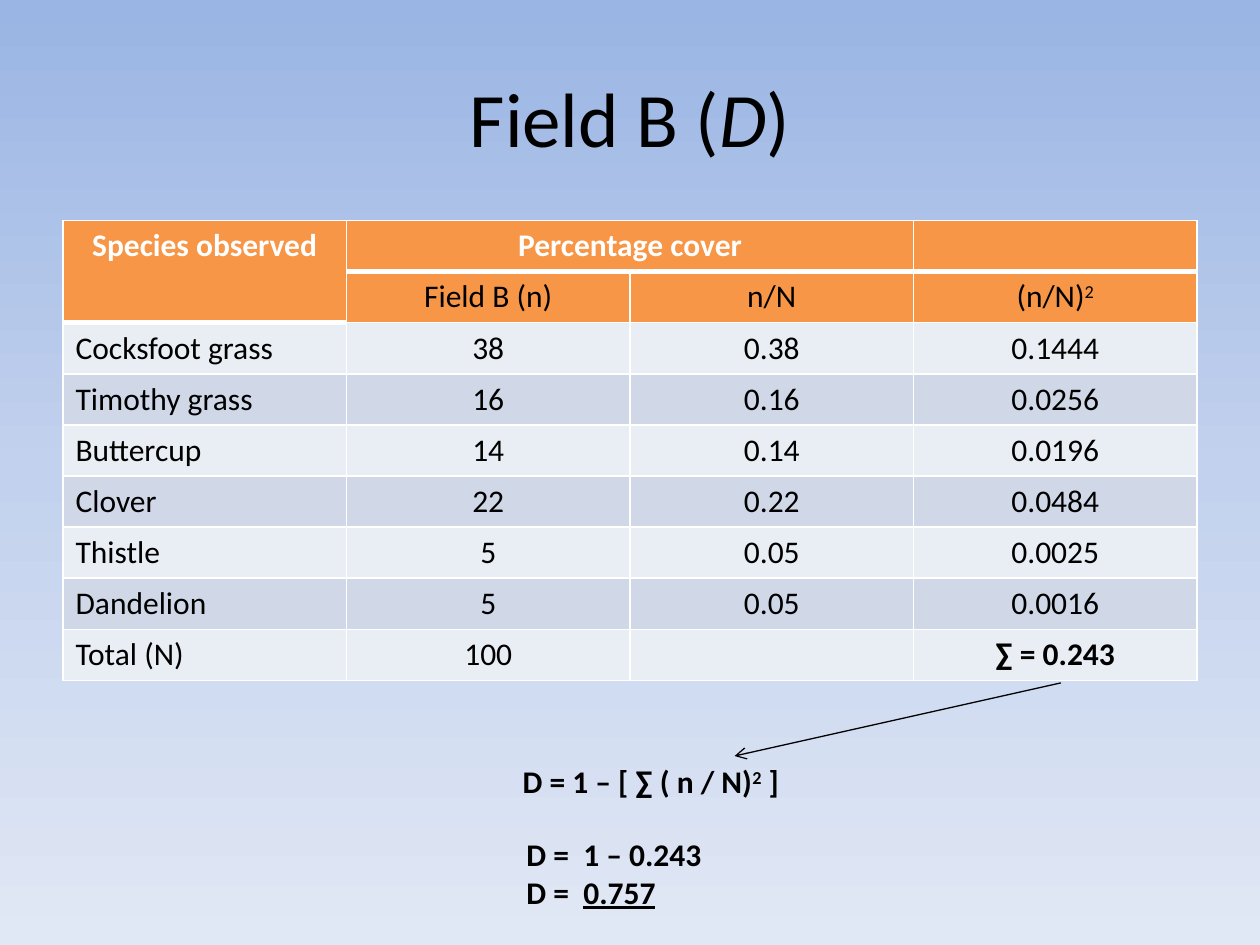
from dataclasses import dataclass

from lxml.etree import SubElement
from pptx import Presentation
from pptx.dml.color import RGBColor
from pptx.enum.shapes import MSO_CONNECTOR as Connector
from pptx.enum.text import MSO_ANCHOR as Anchor, MSO_AUTO_SIZE as AutoSize, PP_ALIGN as Align
from pptx.oxml import parse_xml
from pptx.oxml.ns import nsdecls, qn
from pptx.util import Inches, Pt


@dataclass(frozen=True)
class Theme:
    font: str = "Calibri"
    title_size: int = 44
    body_size: int = 18
    text: str = "000000"
    white: str = "FFFFFF"
    header: str = "F79646"
    bands: tuple = ("E9EDF4", "D0D8E8")
    background: tuple = ((0, "9AB5E4"), (50, "C2D1ED"), (100, "E1E8F5"))
    thin: float = 1
    thick: float = 3
    arrow: float = 0.75


@dataclass(frozen=True)
class Run:
    text: str
    bold: bool = False
    italic: bool = False
    underline: bool = False
    superscript: bool = False
    color: str = "000000"
    size: int = 18


@dataclass(frozen=True)
class Box:
    left: float
    top: float
    width: float
    height: float

    def lengths(self) -> tuple:
        return tuple(Inches(v) for v in (self.left, self.top, self.width, self.height))


@dataclass(frozen=True)
class Species:
    name: str
    cover: str
    share: str
    share_squared: str


THEME = Theme()
TABLE_BOX = Box(0.5, 1.75, 9, 3.65)
HEADER_ROWS = 2
SPECIES = (
    Species("Cocksfoot grass", "38", "0.38", "0.1444"),
    Species("Timothy grass", "16", "0.16", "0.0256"),
    Species("Buttercup", "14", "0.14", "0.0196"),
    Species("Clover", "22", "0.22", "0.0484"),
    Species("Thistle", "5", "0.05", "0.0025"),
    Species("Dandelion", "5", "0.05", "0.0016"),
)


def table_rows() -> list:
    """Return the runs of every cell, row by row."""
    def heading(text: str) -> list:
        return [Run(text, bold=True, color=THEME.white)]

    rows = [
        [heading("Species observed"), heading("Percentage cover"), [], []],
        [[], [Run("Field B (n)")], [Run("n/N")], [Run("(n/N)"), Run("2", superscript=True)]],
    ]
    for species in SPECIES:
        values = (species.name, species.cover, species.share, species.share_squared)
        rows.append([[Run(value)] for value in values])
    rows.append([[Run("Total (N)")], [Run("100")], [], [Run("∑ = 0.243", bold=True)]])
    return rows


def add_runs(paragraph, runs: list, align: Align) -> None:
    paragraph.alignment = align
    for item in runs:
        run = paragraph.add_run()
        run.text = item.text
        font = run.font
        font.name, font.size = THEME.font, Pt(item.size)
        font.bold, font.italic, font.underline = item.bold, item.italic, item.underline
        font.color.rgb = RGBColor.from_string(item.color)
        if item.superscript:
            run._r.get_or_add_rPr().set("baseline", "30000")


def set_background(slide) -> None:
    stops = "".join(
        f'<a:gs pos="{position * 1000}"><a:srgbClr val="{color}"/></a:gs>'
        for position, color in THEME.background
    )
    slide._element.cSld.insert(0, parse_xml(
        f'<p:bg {nsdecls("p", "a")}><p:bgPr><a:gradFill><a:gsLst>{stops}</a:gsLst>'
        '<a:lin ang="5400000" scaled="0"/></a:gradFill><a:effectLst/></p:bgPr></p:bg>'
    ))


def add_title(slide) -> None:
    title = slide.shapes.title
    title.left, title.top, title.width, title.height = Box(0.5, 0.3, 9, 1.25).lengths()
    title.text_frame.vertical_anchor = Anchor.MIDDLE
    size = THEME.title_size
    runs = [Run("Field B (", size=size), Run("D", italic=True, size=size), Run(")", size=size)]
    add_runs(title.text_frame.paragraphs[0], runs, Align.CENTER)


def set_borders(cell, top: float, bottom: float) -> None:
    """Draw white cell borders; widths are in points."""
    properties = cell._tc.get_or_add_tcPr()
    widths = {"lnL": THEME.thin, "lnR": THEME.thin, "lnT": top, "lnB": bottom}
    for side, width in widths.items():
        line = SubElement(properties, qn(f"a:{side}"), w=str(Pt(width)))
        fill = SubElement(line, qn("a:solidFill"))
        SubElement(fill, qn("a:srgbClr"), val=THEME.white)


def add_cover_table(slide) -> None:
    rows = table_rows()
    column_count = len(rows[0])
    table = slide.shapes.add_table(len(rows), column_count, *TABLE_BOX.lengths()).table
    for column in table.columns:
        column.width = Inches(TABLE_BOX.width / column_count)
    for row in table.rows:
        row.height = Inches(TABLE_BOX.height / len(rows))
    for row_index, row in enumerate(rows):
        is_header = row_index < HEADER_ROWS
        fill = THEME.header if is_header else THEME.bands[row_index % 2]
        for column_index, runs in enumerate(row):
            cell = table.cell(row_index, column_index)
            # The species heading is two rows high, so its rule sits one row lower.
            rule_row = 1 if column_index == 0 else 0
            set_borders(
                cell,
                top=THEME.thick if row_index == rule_row + 1 else THEME.thin,
                bottom=THEME.thick if row_index == rule_row else THEME.thin,
            )
            cell.fill.solid()
            cell.fill.fore_color.rgb = RGBColor.from_string(fill)
            centred = is_header or column_index > 0
            add_runs(cell.text_frame.paragraphs[0], runs, Align.CENTER if centred else Align.LEFT)
    table.cell(0, 0).merge(table.cell(1, 0))
    table.cell(0, 1).merge(table.cell(0, 2))


def add_text(slide, box: Box, paragraphs: list, align: Align) -> None:
    frame = slide.shapes.add_textbox(*box.lengths()).text_frame
    frame.word_wrap = True
    frame.auto_size = AutoSize.SHAPE_TO_FIT_TEXT
    for index, runs in enumerate(paragraphs):
        paragraph = frame.add_paragraph() if index else frame.paragraphs[0]
        add_runs(paragraph, runs, align)


def add_arrow(slide, start: tuple, end: tuple) -> None:
    points = [Inches(value) for value in (*start, *end)]
    arrow = slide.shapes.add_connector(Connector.STRAIGHT, *points)
    arrow.line.color.rgb = RGBColor.from_string(THEME.text)
    arrow.line.width = Pt(THEME.arrow)
    SubElement(arrow.line._get_or_add_ln(), qn("a:tailEnd"), type="arrow")
    SubElement(arrow._element.spPr, qn("a:effectLst"))


def main() -> None:
    presentation = Presentation()
    presentation.slide_width, presentation.slide_height = Inches(10), Inches(7.5)
    slide = presentation.slides.add_slide(presentation.slide_layouts[5])
    set_background(slide)
    add_title(slide)
    add_cover_table(slide)
    formula = [
        Run("D = 1 – [ ∑ ( n / N)", bold=True),
        Run("2", bold=True, superscript=True),
        Run(" ]", bold=True),
    ]
    add_text(slide, Box(0.83, 6, 8.67, 0.4), [formula], Align.CENTER)
    add_arrow(slide, (8.42, 5.42), (5.83, 6))
    result = [
        [Run("D =  1 – 0.243", bold=True)],
        [Run("D =  ", bold=True), Run("0.757", bold=True, underline=True)],
    ]
    add_text(slide, Box(4.08, 6.58, 2.58, 0.71), result, Align.LEFT)
    presentation.save("out.pptx")


if __name__ == "__main__":
    main()
